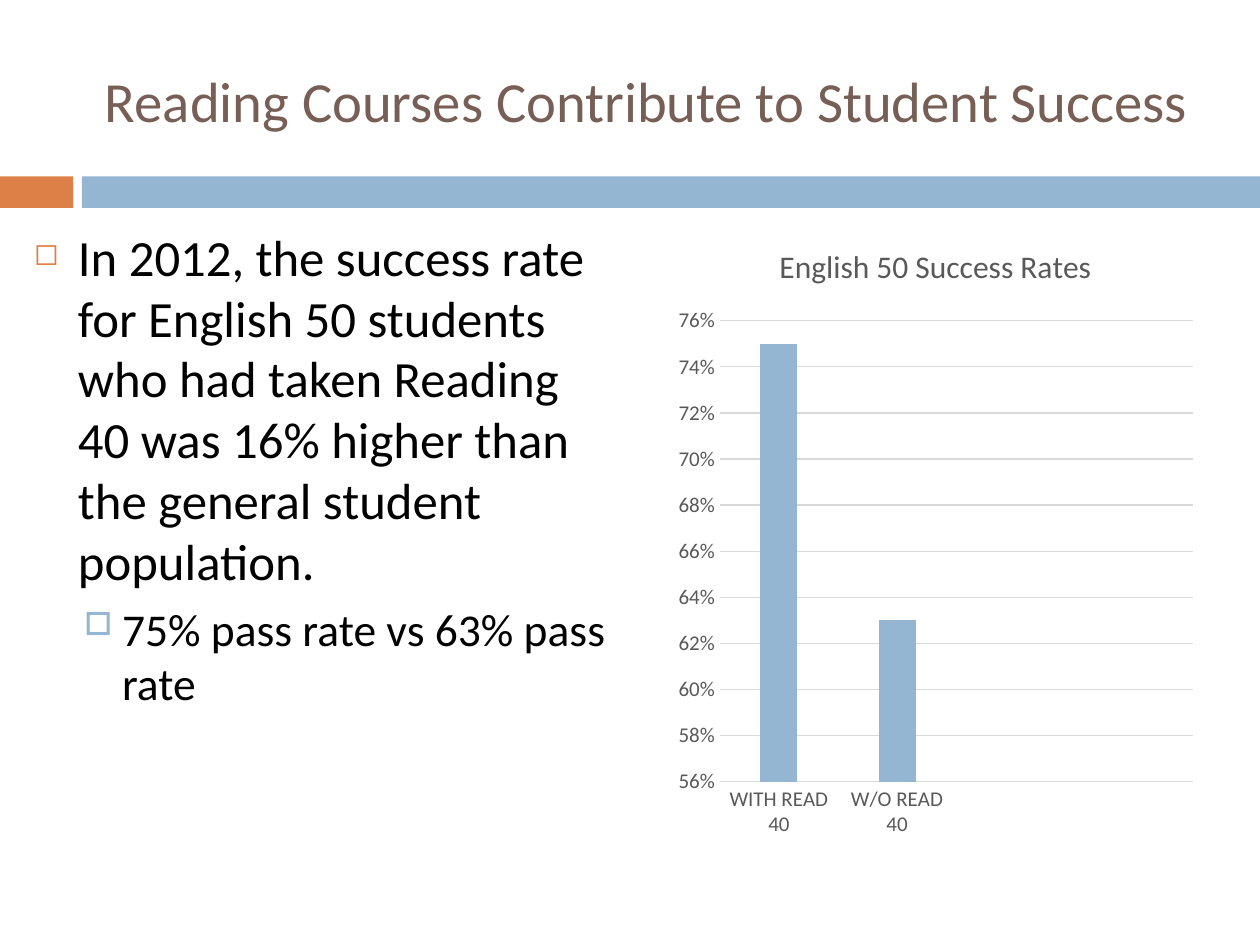
from dataclasses import dataclass

from lxml import etree
from pptx import Presentation, util as u
from pptx.chart import data as cd
from pptx.dml.color import RGBColor
from pptx.enum import chart as ce, shapes, text
from pptx.oxml import ns

PX = 9144
FONT = "Calibri"
COLORS = {
    "orange": "DD8047",
    "blue": "94B6D2",
    "brown": "775F55",
    "black": "000000",
    "gray": "595959",
    "grid": "D9D9D9",
}


@dataclass
class Box:
    x: int
    y: int
    w: int
    h: int

    def emu(self) -> tuple:
        return tuple(v * PX for v in (self.x, self.y, self.w, self.h))


@dataclass
class Band:
    box: Box
    color: str


@dataclass
class Bullet:
    words: str
    level: int
    size: int
    before: float
    margin: int
    hang: int
    mark: str
    color: str
    percent: int


BANDS = [
    Band(Box(0, 140, 58, 25), "orange"),
    Band(Box(65, 140, 935, 25), "blue"),
]
BULLETS = [
    Bullet("In 2012, the success rate for English 50 students who had taken "
           "Reading 40 was 16% higher than the general student population.",
           0, 29, 7, 35, 35, "◻", "orange", 60),
    Bullet("75% pass rate vs 63% pass rate",
           1, 26, 5.5, 70, 30, "□", "blue", 70),
]
RATES = [("WITH READ 40", 0.75), ("W/O READ 40", 0.63), ("", None), ("", None)]


def rgb(name: str) -> RGBColor:
    return RGBColor.from_string(COLORS[name])


def style_font(font, size: float, color: str) -> None:
    font.name = FONT
    font.size = u.Pt(size)
    font.bold = False
    font.color.rgb = rgb(color)


def add_band(s, band: Band) -> None:
    sp = s.shapes.add_shape(shapes.MSO_SHAPE.RECTANGLE, *band.box.emu())
    sp.shadow.inherit = False
    sp.fill.solid()
    sp.fill.fore_color.rgb = rgb(band.color)
    sp.line.fill.background()


def set_title(s, words: str, box: Box) -> None:
    sp = s.shapes.title
    sp.left, sp.top, sp.width, sp.height = box.emu()
    tf = sp.text_frame
    tf.text = words
    tf.word_wrap = True
    tf.auto_size = text.MSO_AUTO_SIZE.NONE
    tf.vertical_anchor = text.MSO_ANCHOR.MIDDLE
    p = tf.paragraphs[0]
    p.alignment = text.PP_ALIGN.CENTER
    style_font(p.runs[0].font, 32.4, "brown")


def format_bullet(p, bullet: Bullet) -> None:
    p.text = bullet.words
    p.level = bullet.level
    p.space_before = u.Pt(bullet.before)
    style_font(p.runs[0].font, bullet.size, "black")
    pPr = p._p.get_or_add_pPr()
    pPr.set("marL", str(bullet.margin * PX))
    pPr.set("indent", str(-bullet.hang * PX))
    clr = etree.SubElement(pPr, ns.qn("a:buClr"))
    etree.SubElement(clr, ns.qn("a:srgbClr"), val=COLORS[bullet.color])
    etree.SubElement(pPr, ns.qn("a:buSzPct"), val=str(bullet.percent * 1000))
    etree.SubElement(pPr, ns.qn("a:buChar"), char=bullet.mark)


def add_bullets(s, bullets: list[Bullet], box: Box) -> None:
    tf = s.shapes.add_textbox(*box.emu()).text_frame
    tf.word_wrap = True
    for i, bullet in enumerate(bullets):
        p = tf.add_paragraph() if i else tf.paragraphs[0]
        format_bullet(p, bullet)


def style_line(line) -> None:
    line.color.rgb = rgb("grid")
    line.width = u.Pt(0.75)


def add_rate_chart(s, title: str, rates: list[tuple], box: Box) -> None:
    data = cd.CategoryChartData(number_format="0%")
    data.categories = [label for label, _ in rates]
    data.add_series("Series 1", [rate for _, rate in rates])
    kind = ce.XL_CHART_TYPE.COLUMN_CLUSTERED
    chart = s.shapes.add_chart(kind, *box.emu(), data).chart
    style_font(chart.font, 10, "black")
    chart.has_legend = False
    chart.has_title = True
    tf = chart.chart_title.text_frame
    tf.text = title
    style_font(tf.paragraphs[0].runs[0].font, 18, "gray")

    plot = chart.plots[0]
    plot.gap_width = 219
    plot.overlap = -27
    plot.vary_by_categories = False
    fill = plot.series[0].format.fill
    fill.solid()
    fill.fore_color.rgb = rgb("blue")

    cat, val = chart.category_axis, chart.value_axis
    for axis in (cat, val):
        axis.major_tick_mark = axis.minor_tick_mark = ce.XL_TICK_MARK.NONE
        style_font(axis.tick_labels.font, 12, "gray")
    style_line(cat.format.line)
    val.format.line.fill.background()
    val.has_major_gridlines = True
    style_line(val.major_gridlines.format.line)
    val.minimum_scale, val.maximum_scale, val.major_unit = 0.56, 0.76, 0.02
    val.tick_labels.number_format = "0%"
    val.tick_labels.number_format_is_linked = False


def main() -> None:
    prs = Presentation()
    prs.slide_width, prs.slide_height = 1000 * PX, 750 * PX
    s = prs.slides.add_slide(prs.slide_layouts[5])
    for band in BANDS:
        add_band(s, band)
    set_title(s, "Reading Courses Contribute to Student Success",
              Box(67, 25, 892, 108))
    add_bullets(s, BULLETS, Box(17, 174, 475, 534))
    add_rate_chart(s, "English 50 Success Rates", RATES,
                   Box(530, 174, 425, 500))
    prs.save("out.pptx")


if __name__ == "__main__":
    main()
